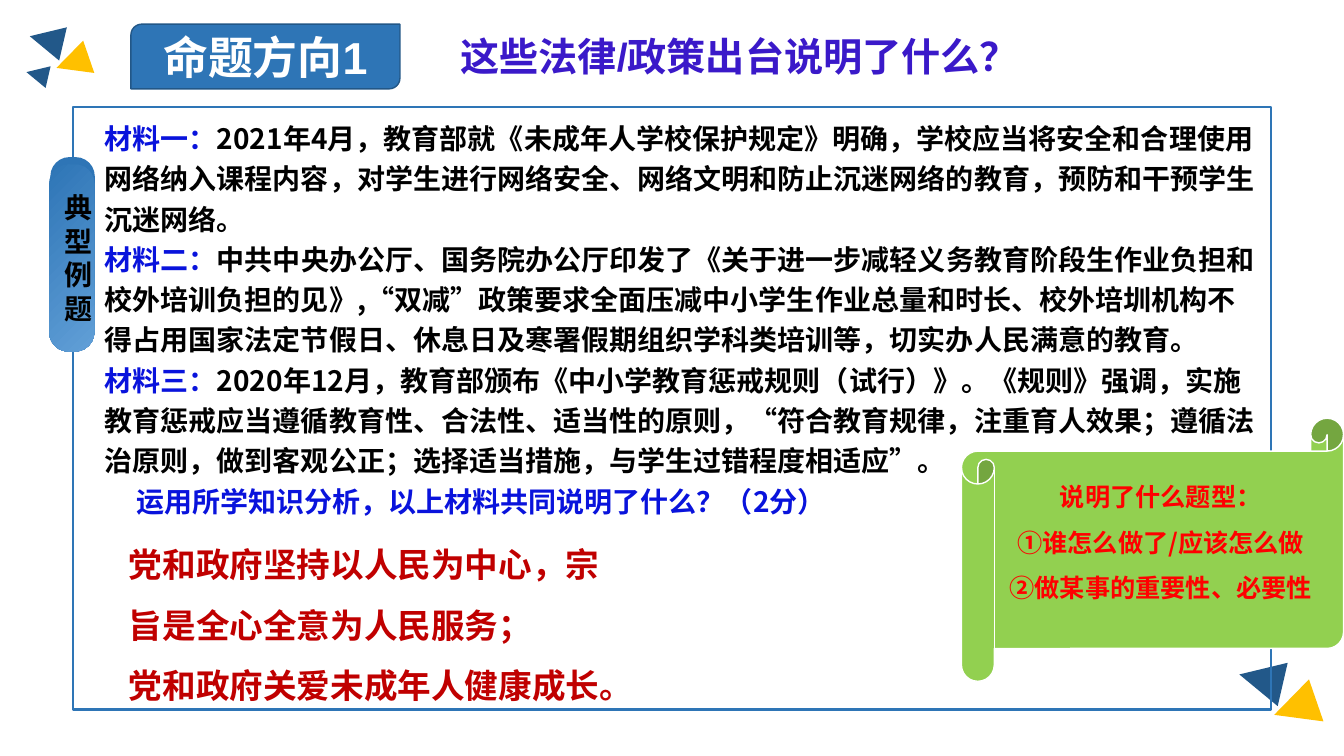
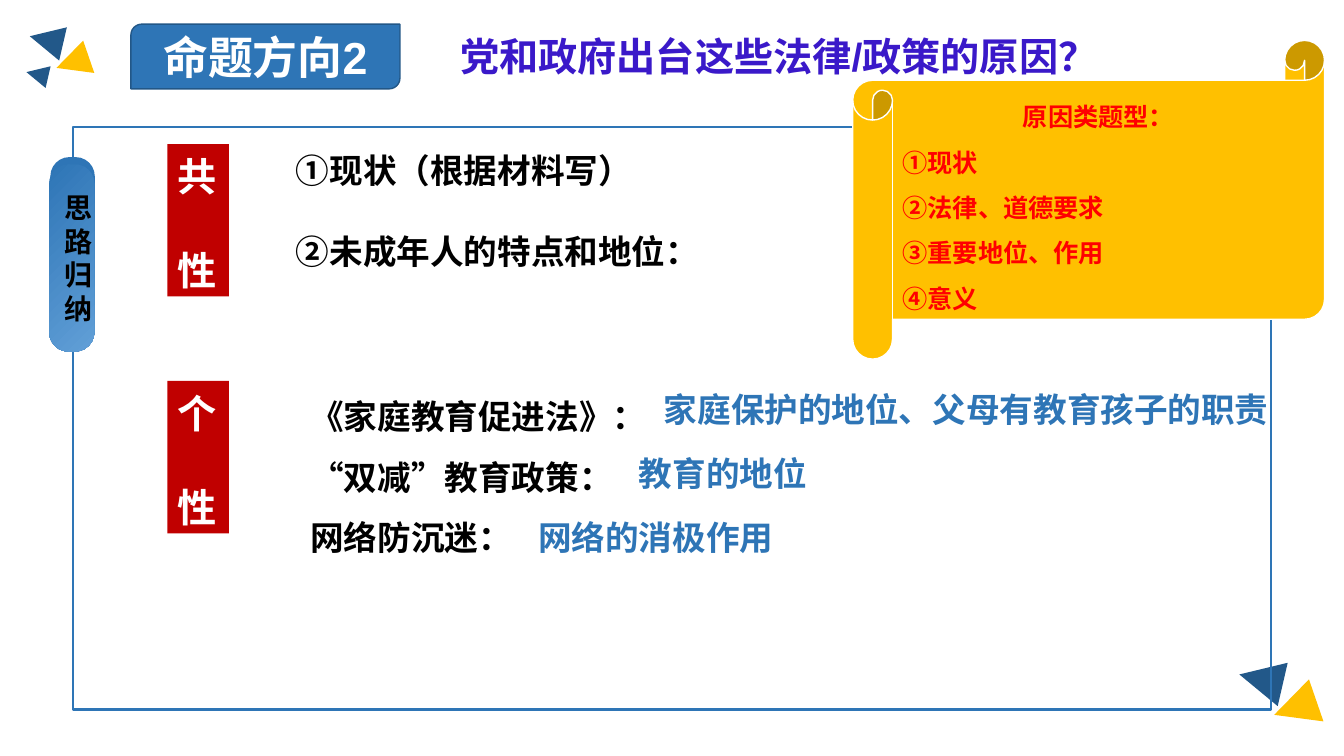
from lxml.etree import SubElement
from pptx import Presentation
from pptx.dml.color import RGBColor
from pptx.enum.shapes import MSO_SHAPE
from pptx.enum.text import MSO_ANCHOR, PP_ALIGN
from pptx.oxml.ns import qn
from pptx.util import Cm, Pt

COLORS = {
    "blue": "2E75B6", "light blue": "619FD7", "navy": "225889", "edge": "225787",
    "gold": "FFC000", "green": "92D050", "white": "FFFFFF", "black": "000000",
    "crimson": "C00000", "red": "FF0000", "violet": "3A19C9", "ink blue": "0913DC",
}
TRIANGLES = [
    (32.08, 17.27, 1.12, 251, "gold"),
    (31.22, 16.56, 1.12, 283, "navy"),
    (1.4, 1.14, 0.86, 251, "gold"),
    (0.74, 0.58, 0.86, 283, "navy"),
    (0.66, 1.6, 0.56, 283, "navy"),
]
MATERIALS = [
    ("材料一：", "2021年4月，教育部就《未成年人学校保护规定》明确，学校应当将安全和合理使用网络纳入课程内容，"
     "对学生进行网络安全、网络文明和防止沉迷网络的教育，预防和干预学生沉迷网络。"),
    ("材料二：", "中共中央办公厅、国务院办公厅印发了《关于进一步减轻义务教育阶段生作业负担和校外培训负担的见》,"
     "“双减”政策要求全面压减中小学生作业总量和时长、校外培圳机构不得占用国家法定节假日、休息日及寒署假期"
     "组织学科类培训等，切实办人民满意的教育。"),
    ("材料三：", "2020年12月，教育部颁布《中小学教育惩戒规则（试行）》。《规则》强调，实施教育惩戒应当遵循"
     "教育性、合法性、适当性的原则，“符合教育规律，注重育人效果；遵循法治原则，做到客观公正；"
     "选择适当措施，与学生过错程度相适应”。"),
]
QUESTION = "运用所学知识分析，以上材料共同说明了什么？（2分）"
LATIN = "Arial"
CHINESE = "Noto Sans CJK SC"
LINE_HEIGHT = 1.2
FRAME_BOTTOM = 17.88


def color(name):
    return RGBColor.from_string(COLORS[name])


class LessonDeck:
    def __init__(self):
        self.deck = Presentation()
        self.deck.slide_width, self.deck.slide_height = Cm(33.87), Cm(19.05)
        self.page = None

    def shape(self, kind, left, top, width, height, fill=None, line=None, weight=1):
        box = self.page.shapes.add_shape(kind, Cm(left), Cm(top), Cm(width), Cm(height))
        box.shadow.inherit = False
        if fill:
            box.fill.solid()
            box.fill.fore_color.rgb = color(fill)
        else:
            box.fill.background()
        if line:
            box.line.color.rgb = color(line)
            box.line.width = Pt(weight)
        else:
            box.line.fill.background()
        return box

    def fill_text(self, box, paragraphs, size, ink, font=CHINESE, spacing=1.0, gap=0,
                  align=PP_ALIGN.LEFT, anchor=MSO_ANCHOR.TOP):
        frame = box.text_frame
        frame.word_wrap = True
        frame.vertical_anchor = anchor
        if anchor == MSO_ANCHOR.TOP:
            frame.margin_top = Cm(0.2)
        for index, spans in enumerate(paragraphs):
            para = frame.paragraphs[0] if index == 0 else frame.add_paragraph()
            para.alignment = align
            para.line_spacing = Pt(round(size * LINE_HEIGHT * spacing, 1))
            if index and gap:
                para.space_before = Pt(gap)
            para.font.size = Pt(size)
            para.font.bold = True
            para.font.color.rgb = color(ink)
            para.font.name = font
            east_asian = SubElement(para.font._element, qn("a:ea"))
            east_asian.set("typeface", CHINESE)
            for text, span_ink in [(spans, None)] if isinstance(spans, str) else spans:
                span = para.add_run()
                span.text = text
                if span_ink:
                    span.font.color.rgb = color(span_ink)
        return frame

    def text(self, left, top, width, height, paragraphs, size, ink, **style):
        box = self.page.shapes.add_textbox(Cm(left), Cm(top), Cm(width), Cm(height))
        return self.fill_text(box, paragraphs, size, ink, **style)

    def side_label(self, label):
        back = self.shape(MSO_SHAPE.ROUNDED_RECTANGLE, 1.24, 4.14, 1.14, 4.72, "blue")
        back.adjustments[0] = 0.43
        back.fill.gradient()
        back.fill.gradient_angle = 315
        for stop, position, name in zip(back.fill.gradient_stops, (0, 1), ("blue", "light blue")):
            stop.position = position
            stop.color.rgb = color(name)
        self.fill_text(back, [label], 20, "black", font=LATIN,
                       align=PP_ALIGN.CENTER, anchor=MSO_ANCHOR.MIDDLE)

    def new_page(self, heading, title, label, frame_top):
        self.page = self.deck.slides.add_slide(self.deck.slide_layouts[6])
        for left, top, side, angle, fill in TRIANGLES:
            corner = self.shape(MSO_SHAPE.ISOSCELES_TRIANGLE, left, top, side, side, fill)
            corner.rotation = angle
        pill = self.shape(MSO_SHAPE.ROUNDED_RECTANGLE, 1.27, 3.96, 1.12, 4.27, "blue")
        pill.adjustments[0] = 0.43
        self.shape(MSO_SHAPE.RECTANGLE, 1.83, frame_top, 30.2, FRAME_BOTTOM - frame_top,
                   line="blue", weight=1.5)
        self.side_label(label)
        tab = self.shape(MSO_SHAPE.ROUND_2_DIAG_RECTANGLE, 3.3, 0.61, 6.78, 1.63, "blue", "edge")
        self.fill_text(tab, [heading], 32, "white", font=LATIN,
                       align=PP_ALIGN.CENTER, anchor=MSO_ANCHOR.MIDDLE)
        self.text(11.35, 0.61, 21.03, 1.45, [title], 28, "violet", font=LATIN)

    def scroll(self, left, top, width, height, fill, lines):
        box = self.shape(MSO_SHAPE.HORIZONTAL_SCROLL, left, top, width, height, fill, "white")
        return self.fill_text(box, lines, 18, "red", spacing=1.5,
                              align=PP_ALIGN.CENTER, anchor=MSO_ANCHOR.MIDDLE)

    def tile(self, top, letters):
        box = self.shape(MSO_SHAPE.RECTANGLE, 4.22, top, 1.55, 3.84, "crimson")
        self.fill_text(box, letters, 28, "white", font=LATIN, gap=33.6)


def build_meaning(lesson):
    lesson.new_page("命题方向1", "这些法律/政策出台说明了什么？", "典型例题", 2.69)
    paragraphs = [[(name, "ink blue"), (body, None)] for name, body in MATERIALS]
    frame = lesson.text(2.39, 2.69, 29.64, 10.52, paragraphs + [[(QUESTION, "ink blue")]],
                        20, "black", spacing=1.2)
    frame.paragraphs[-1]._p.get_or_add_pPr().set("indent", str(Cm(0.79)))
    lesson.text(3, 13, 13.13, 4.88,
                ["党和政府坚持以人民为中心，宗旨是全心全意为人民服务；", "党和政府关爱未成年人健康成长。"],
                24, "crimson", spacing=1.5)
    frame = lesson.scroll(24.23, 10.54, 9.63, 6.63, "green",
                          ["说明了什么题型：", "①谁怎么做了/应该怎么做", "②做某事的重要性、必要性"])
    frame.margin_bottom = Cm(0.89)


def build_reasons(lesson):
    lesson.new_page("命题方向2", "党和政府出台这些法律/政策的原因？", "思路归纳", 3.2)
    lesson.tile(3.63, ["共", "性"])
    lesson.tile(9.6, ["个", "性"])
    lesson.text(7.21, 3.58, 23.22, 4.37, ["①现状（根据材料写）", "②未成年人的特点和地位："],
                24, "black", gap=28.8)
    lesson.text(7.57, 9.27, 23.22, 6.4, ["《家庭教育促进法》：", "“双减”教育政策：", "网络防沉迷："],
                24, "black", spacing=1.5)
    frame = lesson.scroll(21.49, 1.02, 11.89, 8.03, "gold",
                          ["原因类题型：", "①现状", "②法律、道德要求", "③重要地位、作用", "④意义"])
    for para in frame.paragraphs[1:]:
        para.alignment = PP_ALIGN.LEFT
    answers = [(16.48, 15.8, "家庭保护的地位、父母有教育孩子的职责"),
               (15.85, 4.75, "教育的地位"),
               (13.31, 6.45, "网络的消极作用")]
    for row, (left, width, answer) in enumerate(answers):
        frame = lesson.text(left, 9.6 + 1.61 * row, width, 1.27, [answer], 24, "blue")
        frame.word_wrap = False


def main():
    lesson = LessonDeck()
    build_meaning(lesson)
    build_reasons(lesson)
    lesson.deck.save("out.pptx")


if __name__ == "__main__":
    main()
